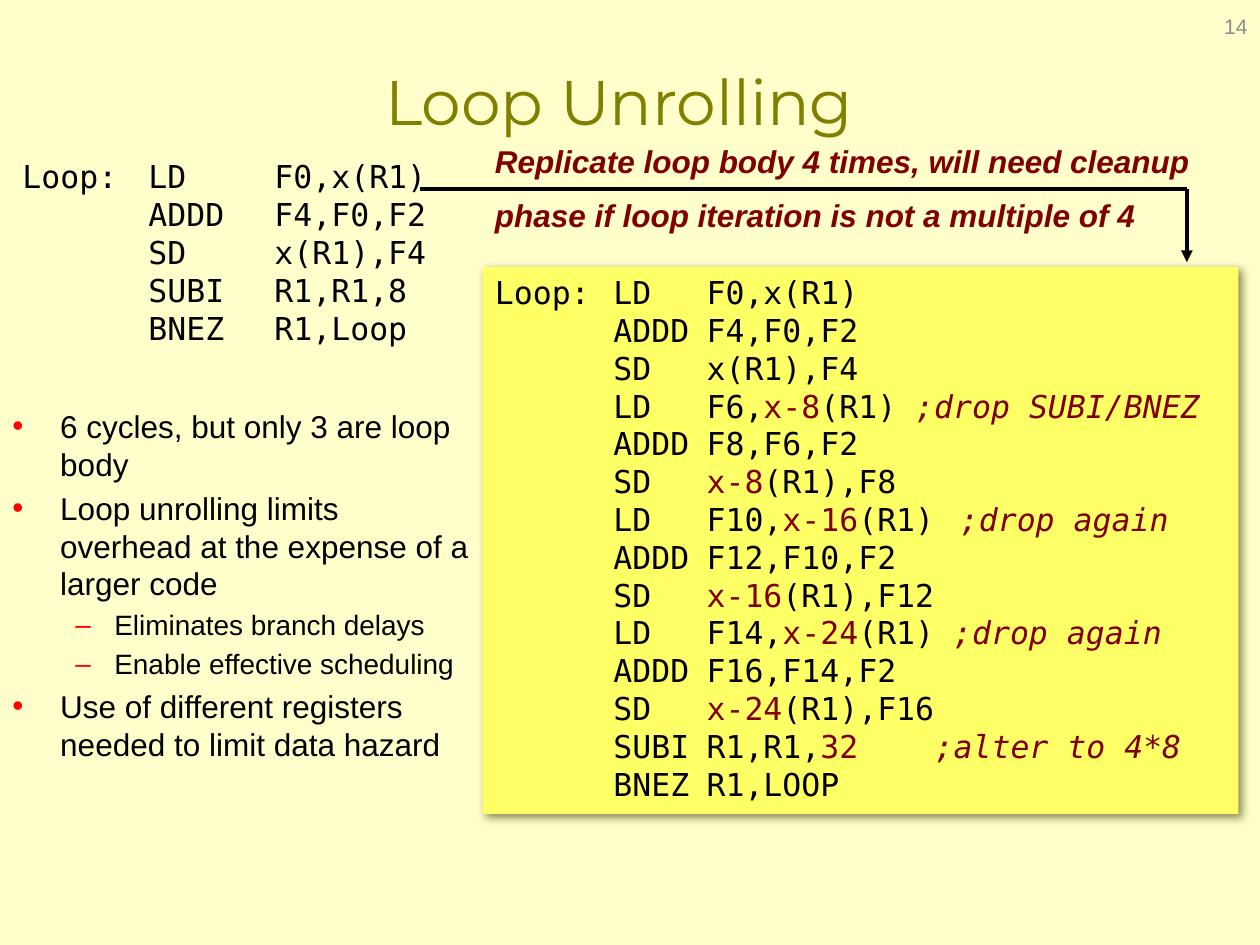
"""Build the loop unrolling slide."""
from dataclasses import dataclass

from lxml.etree import SubElement
from pptx import Presentation
from pptx.dml.color import RGBColor
from pptx.enum.shapes import MSO_CONNECTOR, MSO_SHAPE
from pptx.enum.text import MSO_ANCHOR, PP_ALIGN
from pptx.oxml.ns import qn
from pptx.util import Inches, Pt

MONO, SANS = "DejaVu Sans Mono", "Arial"
BLACK, MAROON, RED = "000000", "800000", "FF0000"
LOOP_TABS = (1, 2)
CODE_TABS = (0.94, 1.68, 3.69)
ALTER_TABS = (0.94, 1.68, 3.49)

LOOP = ["Loop:\tLD\tF0,x(R1)", "\tADDD\tF4,F0,F2", "\tSD\tx(R1),F4",
        "\tSUBI\tR1,R1,8", "\tBNEZ\tR1,Loop"]
CODE = ["Loop:\tLD\tF0,x(R1)", "\tADDD\tF4,F0,F2", "\tSD\tx(R1),F4",
        "\tLD\tF6,|x-8|(R1) |;drop SUBI/BNEZ", "\tADDD\tF8,F6,F2",
        "\tSD\t|x-8|(R1),F8",
        "\tLD\tF10,|x-16|(R1)\t|;drop again", "\tADDD\tF12,F10,F2",
        "\tSD\t|x-16|(R1),F12",
        "\tLD\tF14,|x-24|(R1) |;drop again", "\tADDD\tF16,F14,F2",
        "\tSD\t|x-24|(R1),F16",
        "\tSUBI\tR1,R1,|32|\t|;alter to 4*8", "\tBNEZ\tR1,LOOP"]
CLAIM = ["Replicate loop body 4 times, will need cleanup",
         "phase if loop iteration is not a multiple of 4"]


@dataclass
class Level:
    mark: str
    left: float
    hang: float
    size: int


@dataclass
class Point:
    text: str
    level: Level


MAIN = Level("•", 0.38, 0.38, 18)
SUB = Level("–", 0.81, 0.31, 16)
POINTS = [
    Point("6 cycles, but only 3 are loop body", MAIN),
    Point("Loop unrolling limits overhead at the expense of a larger code", MAIN),
    Point("Eliminates branch delays", SUB),
    Point("Enable effective scheduling", SUB),
    Point("Use of different registers needed to limit data hazard", MAIN),
]


def color(code: str) -> RGBColor:
    return RGBColor.from_string(code)


def place(shape, left: float, top: float, width: float, height: float) -> None:
    shape.left, shape.top = Inches(left), Inches(top)
    shape.width, shape.height = Inches(width), Inches(height)


def add_box(slide, left: float, top: float, width: float, height: float):
    box = slide.shapes.add_textbox(Inches(left), Inches(top),
                                   Inches(width), Inches(height))
    box.text_frame.word_wrap = True
    return box.text_frame


def add_line(frame, index: int):
    return frame.add_paragraph() if index else frame.paragraphs[0]


def style(para, name: str, size: int, code: str) -> None:
    para.font.name, para.font.size = name, Pt(size)
    para.font.color.rgb = color(code)


def set_tabs(para, stops: tuple[float, ...]) -> None:
    tabs = SubElement(para._p.get_or_add_pPr(), qn("a:tabLst"))
    for stop in stops:
        SubElement(tabs, qn("a:tab"), pos=str(Inches(stop)), algn="l")


def add_code(frame, lines: list[str], stops: tuple[float, ...]) -> None:
    for index, line in enumerate(lines):
        para = add_line(frame, index)
        para.alignment = PP_ALIGN.LEFT
        para.line_spacing = Pt(21.6)
        set_tabs(para, ALTER_TABS if ";alter" in line else stops)
        style(para, MONO, 18, BLACK)
        for place_no, part in enumerate(line.split("|")):
            run = para.add_run()
            run.text = part
            run.font.color.rgb = color(MAROON if place_no % 2 or part[0] == ";" else BLACK)
            run.font.italic = part[0] == ";"


def add_points(frame, points: list[Point]) -> None:
    for index, point in enumerate(points):
        level = point.level
        para = add_line(frame, index)
        para.text = point.text
        para.level = int(level is SUB)
        para.line_spacing = Pt(1.2 * level.size)
        para.space_before = Pt(0.2 * level.size if index else 0)
        props = para._p.get_or_add_pPr()
        props.set("marL", str(Inches(level.left)))
        props.set("indent", str(Inches(-level.hang)))
        tint = SubElement(props, qn("a:buClr"))
        SubElement(tint, qn("a:srgbClr"), val=RED)
        SubElement(props, qn("a:buFont"), typeface=SANS)
        SubElement(props, qn("a:buChar"), char=level.mark)
        style(para, SANS, level.size, BLACK)


def add_panel(slide, left: float, top: float, width: float, height: float):
    panel = slide.shapes.add_shape(MSO_SHAPE.RECTANGLE, Inches(left), Inches(top),
                                   Inches(width), Inches(height))
    panel.shadow.inherit = False
    panel.fill.solid()
    panel.fill.fore_color.rgb = color("FFFF66")
    panel.line.fill.background()
    effects = panel._element.spPr.find(qn("a:effectLst"))
    shade = SubElement(effects, qn("a:outerShdw"), blurRad=str(Pt(5)),
                       dist=str(Pt(3)), dir="2700000", algn="tl", rotWithShape="0")
    tint = SubElement(shade, qn("a:srgbClr"), val="666633")
    SubElement(tint, qn("a:alpha"), val="75000")
    panel.text_frame.word_wrap = True
    panel.text_frame.vertical_anchor = MSO_ANCHOR.TOP
    return panel.text_frame


def add_path(slide, stops: list[tuple[float, float]]) -> None:
    for start, end in zip(stops, stops[1:]):
        line = slide.shapes.add_connector(MSO_CONNECTOR.STRAIGHT,
                                          *map(Inches, start + end))
        line.line.color.rgb = color(BLACK)
        line.line.width = Pt(2.25)
        SubElement(line._element.spPr, qn("a:effectLst"))
    SubElement(line.line._get_or_add_ln(), qn("a:tailEnd"), type="triangle")


def main() -> None:
    deck = Presentation()
    deck.slide_width, deck.slide_height = Inches(10), Inches(7.5)
    slide = deck.slides.add_slide(deck.slide_layouts[5])
    slide.background.fill.solid()
    slide.background.fill.fore_color.rgb = color("FFFFCC")

    title = slide.shapes.title
    place(title, 0.58, 0.17, 8.67, 1.25)
    title.text_frame.text = "Loop Unrolling"
    title.text_frame.vertical_anchor = MSO_ANCHOR.MIDDLE
    style(title.text_frame.paragraphs[0], "Montserrat", 36, "808000")

    add_code(add_panel(slide, 3.83, 2.12, 6, 4.34), CODE, CODE_TABS)
    add_code(add_box(slide, 0.08, 1.2, 3.58, 1.92), LOOP, LOOP_TABS)
    add_path(slide, [(3.33, 1.5), (9.42, 1.5), (9.42, 2.08)])

    claim = add_box(slide, 3.83, 1.08, 5.92, 0.85)
    for index, text in enumerate(CLAIM):
        para = add_line(claim, index)
        para.text = text
        para.line_spacing = Pt(21.6)
        para.space_before = Pt(9 * index)
        style(para, SANS, 18, MAROON)
        para.font.bold = para.font.italic = True

    add_points(add_box(slide, 0, 3.18, 3.83, 4.17), POINTS)

    number = add_box(slide, 7.67, 0.01, 2.33, 0.4)
    number.vertical_anchor = MSO_ANCHOR.MIDDLE
    number.text = "14"
    number.paragraphs[0].alignment = PP_ALIGN.RIGHT
    style(number.paragraphs[0], SANS, 12, "8C8C8C")

    deck.save("out.pptx")


if __name__ == "__main__":
    main()
